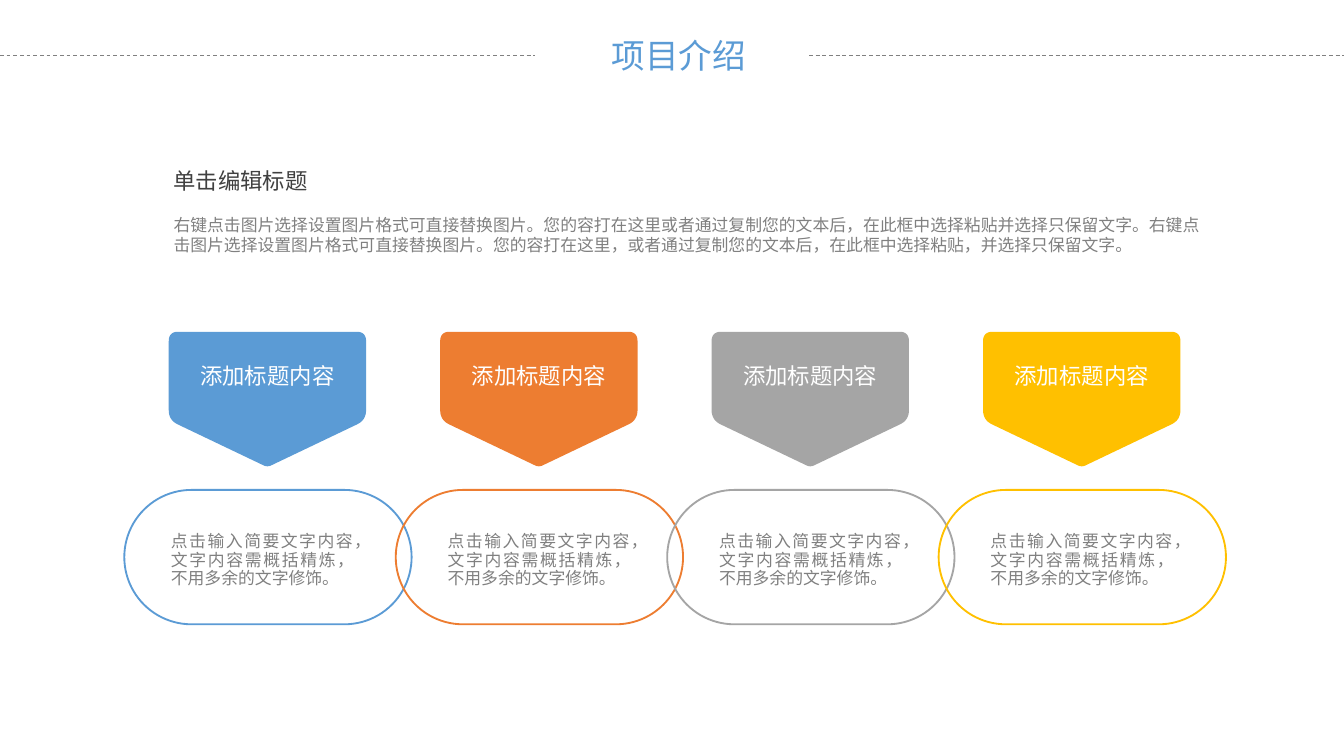
from lxml import etree
from pptx import Presentation
from pptx.dml.color import RGBColor
from pptx.enum import dml, shapes, text
from pptx.oxml.ns import qn
from pptx.util import Cm, Pt

TITLE = "项目介绍"
HEADING = "单击编辑标题"
INTRO = (
    "右键点击图片选择设置图片格式可直接替换图片。您的容打在这里或者通过复制您的文本后，"
    "在此框中选择粘贴并选择只保留文字。右键点击图片选择设置图片格式可直接替换图片。"
    "您的容打在这里，或者通过复制您的文本后，在此框中选择粘贴，并选择只保留文字。"
)
LABEL = "添加标题内容"
DETAIL = "点击输入简要文字内容，文字内容需概括精炼，不用多余的文字修饰。"
# (label, detail, accent, indent of the detail text from its capsule in cm)
COLUMNS = [
    (LABEL, DETAIL, "5B9BD5", 0.63),
    (LABEL, DETAIL, "ED7D31", 0.73),
    (LABEL, DETAIL, "A5A5A5", 0.73),
    (LABEL, DETAIL, "FFC000", 0.73),
]
THEME = dict(
    font="Noto Sans CJK SC",
    title="5B9BD5", heading="404040", body="808080", label="FFFFFF", rule="808080",
    title_size=18, heading_size=12, body_size=9,
)

# Layout in cm, on a 16:9 page
SLIDE_W = 25.4
SLIDE_H = SLIDE_W * 9 / 16
RULE_Y, RULE_W = 1.04, 10.11
PITCH = 5.13
CAPSULE_X, CAPSULE_Y, CAPSULE_W, CAPSULE_H = 2.35, 9.26, 5.43, 2.54
BADGE_X, BADGE_Y, BADGE_W = 3.19, 6.27, 3.73
# Badge corners: x, y, rounding length
BADGE = [(0, 0, 0.18), (BADGE_W, 0, 0.18), (BADGE_W, 1.67, 0.19),
         (BADGE_W / 2, 2.56, 0.08), (0, 1.67, 0.19)]


def rgb(name):
    return RGBColor.from_string(THEME.get(name, name))


def style(p, size, color, align=text.PP_ALIGN.LEFT):
    p.alignment = align
    p.font.size, p.font.name = Pt(THEME[size]), THEME["font"]
    p.font.color.rgb = rgb(color)
    r_pr = p._p.get_or_add_pPr().find(qn("a:defRPr"))
    etree.SubElement(r_pr, qn("a:ea"), typeface=THEME["font"])


def text_box(slide, x, y, w, h, wrap=True):
    tf = slide.shapes.add_textbox(Cm(x), Cm(y), Cm(w), Cm(h)).text_frame
    tf.word_wrap = wrap
    return tf


def set_margins(tf, left, top, right, bottom):
    tf.margin_left, tf.margin_top = Cm(left), Cm(top)
    tf.margin_right, tf.margin_bottom = Cm(right), Cm(bottom)


def add_title(slide):
    sp = slide.shapes.title
    sp.left, sp.top, sp.width, sp.height = Cm(11.35), Cm(0.55), Cm(2.95), Cm(0.97)
    tf = sp.text_frame
    tf.text = TITLE
    tf.word_wrap, tf.auto_size = False, text.MSO_AUTO_SIZE.NONE
    tf.vertical_anchor = text.MSO_ANCHOR.MIDDLE
    set_margins(tf, 0.2, 0.1, 0.2, 0.1)
    style(tf.paragraphs[0], "title_size", "title", text.PP_ALIGN.CENTER)


def add_rule(slide, x):
    line = slide.shapes.add_connector(
        shapes.MSO_CONNECTOR.STRAIGHT, Cm(x), Cm(RULE_Y), Cm(x + RULE_W), Cm(RULE_Y))
    line.line.color.rgb = rgb("rule")
    line.line.width = Pt(0.5)
    line.line.dash_style = dml.MSO_LINE.DASH
    etree.SubElement(line._element.spPr, qn("a:effectLst"))


def add_intro(slide):
    tf = text_box(slide, 3.09, 3.06, 20.07, 1.83)
    set_margins(tf, 0.19, 0.1, 0.3, 0.08)
    p = tf.paragraphs[0]
    p.text, p.line_spacing, p.space_before = HEADING, Pt(14.4), Pt(2.4)
    style(p, "heading_size", "heading")
    p = tf.add_paragraph()
    p.text, p.line_spacing, p.space_before = INTRO, Pt(10.8), Pt(11)
    style(p, "body_size", "body")


def rounded_outline(corners, steps=8):
    """Return the points of a polygon whose corners are quadratic curves."""
    def toward(a, b, length):
        dx, dy = b[0] - a[0], b[1] - a[1]
        k = length / (dx * dx + dy * dy) ** 0.5
        return a[0] + dx * k, a[1] + dy * k

    points = []
    for i, (x, y, cut) in enumerate(corners):
        start = toward((x, y), corners[i - 1], cut)
        end = toward((x, y), corners[(i + 1) % len(corners)], cut)
        for n in range(steps + 1):
            t = n / steps
            points.append(tuple(
                (1 - t) ** 2 * s + 2 * t * (1 - t) * c + t ** 2 * e
                for s, c, e in zip(start, (x, y), end)))
    return points


def add_badge(slide, x, label, color):
    points = [(Cm(x + px), Cm(BADGE_Y + py)) for px, py in rounded_outline(BADGE)]
    builder = slide.shapes.build_freeform(*points[0])
    builder.add_line_segments(points[1:], close=True)
    sp = builder.convert_to_shape()
    sp.shadow.inherit = False
    sp.fill.solid()
    sp.fill.fore_color.rgb = rgb(color)
    sp.line.fill.background()

    tf = text_box(slide, x + 0.33, 6.71, 3.07, 0.76, wrap=False)
    tf.vertical_anchor = text.MSO_ANCHOR.MIDDLE
    p = tf.paragraphs[0]
    p.text = label
    style(p, "heading_size", "label", text.PP_ALIGN.CENTER)


def add_capsule(slide, x, detail, color, indent):
    sp = slide.shapes.add_shape(
        shapes.MSO_SHAPE.ROUNDED_RECTANGLE,
        Cm(x), Cm(CAPSULE_Y), Cm(CAPSULE_W), Cm(CAPSULE_H))
    sp.adjustments[0] = 0.5
    sp.shadow.inherit = False
    sp.fill.background()
    sp.line.color.rgb = rgb(color)
    sp.line.width = Pt(1)

    p = text_box(slide, x + indent, 9.95, 3.96, 1.32).paragraphs[0]
    p.text, p.line_spacing = detail, Pt(9.8)
    style(p, "body_size", "body", text.PP_ALIGN.JUSTIFY)


def main():
    prs = Presentation()
    prs.slide_width, prs.slide_height = Cm(SLIDE_W), Cm(SLIDE_H)
    slide = prs.slides.add_slide(prs.slide_layouts.get_by_name("Title Only"))
    add_title(slide)
    for x in (0, SLIDE_W - RULE_W):
        add_rule(slide, x)
    add_intro(slide)
    for i, (label, detail, color, indent) in enumerate(COLUMNS):
        add_capsule(slide, CAPSULE_X + i * PITCH, detail, color, indent)
        add_badge(slide, BADGE_X + i * PITCH, label, color)
    prs.save("out.pptx")


if __name__ == "__main__":
    main()
